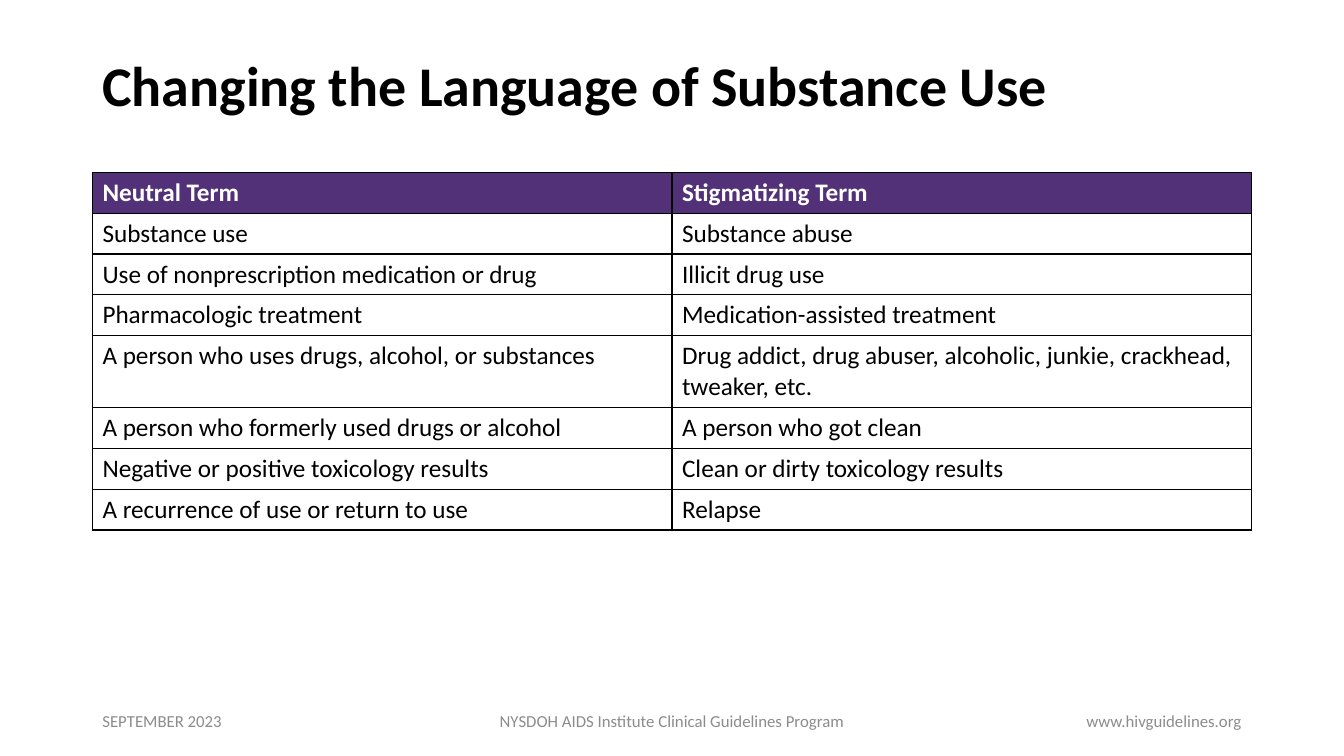
"""Build a slide that contrasts neutral and stigmatizing substance use terms."""
from dataclasses import dataclass

import lxml.etree
import pptx
import pptx.dml.color
import pptx.enum.text
import pptx.oxml.ns
import pptx.slide
import pptx.table
import pptx.text.text
import pptx.util

Cm = pptx.util.Cm
Align = pptx.enum.text.PP_ALIGN

FONT = "Calibri"
BLACK, WHITE, PURPLE, GRAY = "000000", "FFFFFF", "523178", "8C8C8C"
MARGIN, CONTENT_WIDTH = 2.33, 29.21
TABLE_TOP, ROW_HEIGHT, TWO_LINE_HEIGHT = 4.34, 1.03, 1.8
FOOTER_TOP, FOOTER_HEIGHT = 17.65, 1.02


@dataclass(frozen=True)
class Label:
    text: str
    left: float
    top: float
    width: float
    height: float
    size: float
    color: str
    bold: bool = False
    align: Align = Align.LEFT
    line_spacing: float = 1.0


@dataclass(frozen=True)
class TermPair:
    neutral: str
    stigmatizing: str
    height: float = ROW_HEIGHT


LABELS = [
    Label("Changing the Language of Substance Use", MARGIN, 0.38, 27, 3.68,
          40, BLACK, bold=True, line_spacing=0.9),
    Label("NYSDOH AIDS Institute Clinical Guidelines Program", 11.22, FOOTER_TOP,
          11.43, FOOTER_HEIGHT, 12, GRAY, align=Align.CENTER),
    Label("www.hivguidelines.org", 23.92, FOOTER_TOP, 7.62, FOOTER_HEIGHT,
          12, GRAY, align=Align.RIGHT),
    Label("SEPTEMBER 2023", MARGIN, FOOTER_TOP, 7.62, FOOTER_HEIGHT, 12, GRAY),
]

TERMS = [
    TermPair("Neutral Term", "Stigmatizing Term"),
    TermPair("Substance use", "Substance abuse"),
    TermPair("Use of nonprescription medication or drug", "Illicit drug use"),
    TermPair("Pharmacologic treatment", "Medication-assisted treatment"),
    TermPair("A person who uses drugs, alcohol, or substances",
             "Drug addict, drug abuser, alcoholic, junkie, crackhead, tweaker, etc.",
             TWO_LINE_HEIGHT),
    TermPair("A person who formerly used drugs or alcohol", "A person who got clean"),
    TermPair("Negative or positive toxicology results", "Clean or dirty toxicology results"),
    TermPair("A recurrence of use or return to use", "Relapse"),
]


def rgb(color: str) -> pptx.dml.color.RGBColor:
    return pptx.dml.color.RGBColor.from_string(color)


def format_text(paragraph: pptx.text.text._Paragraph, size: float, color: str, bold: bool) -> None:
    for run in paragraph.runs:
        run.font.name = FONT
        run.font.size = pptx.util.Pt(size)
        run.font.bold = bold
        run.font.color.rgb = rgb(color)


def add_label(slide: pptx.slide.Slide, label: Label) -> None:
    shape = slide.shapes.add_textbox(
        Cm(label.left), Cm(label.top), Cm(label.width), Cm(label.height))
    text_frame = shape.text_frame
    text_frame.word_wrap = True
    text_frame.vertical_anchor = pptx.enum.text.MSO_ANCHOR.MIDDLE
    text_frame.text = label.text
    paragraph = text_frame.paragraphs[0]
    paragraph.alignment = label.align
    paragraph.line_spacing = label.line_spacing
    format_text(paragraph, label.size, label.color, label.bold)


def add_borders(cell: pptx.table._Cell, color: str) -> None:
    qn = pptx.oxml.ns.qn
    properties = cell._tc.get_or_add_tcPr()
    for side in ("lnL", "lnR", "lnT", "lnB"):
        line = lxml.etree.SubElement(properties, qn(f"a:{side}"), w=str(pptx.util.Pt(1)))
        fill = lxml.etree.SubElement(line, qn("a:solidFill"))
        lxml.etree.SubElement(fill, qn("a:srgbClr"), val=color)


def fill_cell(cell: pptx.table._Cell, text: str, is_header: bool) -> None:
    add_borders(cell, BLACK)
    if is_header:
        cell.fill.solid()
        cell.fill.fore_color.rgb = rgb(PURPLE)
    else:
        cell.fill.background()
    cell.text_frame.text = text
    format_text(cell.text_frame.paragraphs[0], 18, WHITE if is_header else BLACK, is_header)


def add_term_table(slide: pptx.slide.Slide, terms: list[TermPair]) -> None:
    height = sum(pair.height for pair in terms)
    table = slide.shapes.add_table(
        len(terms), 2, Cm(MARGIN), Cm(TABLE_TOP), Cm(CONTENT_WIDTH), Cm(height)).table
    for row_index, pair in enumerate(terms):
        table.rows[row_index].height = Cm(pair.height)
        for column_index, text in enumerate((pair.neutral, pair.stigmatizing)):
            fill_cell(table.cell(row_index, column_index), text, row_index == 0)


def main() -> None:
    presentation = pptx.Presentation()
    presentation.slide_width = Cm(33.87)
    presentation.slide_height = Cm(19.05)
    slide = presentation.slides.add_slide(presentation.slide_layouts[6])
    add_term_table(slide, TERMS)
    for label in LABELS:
        add_label(slide, label)
    presentation.save("out.pptx")


if __name__ == "__main__":
    main()
